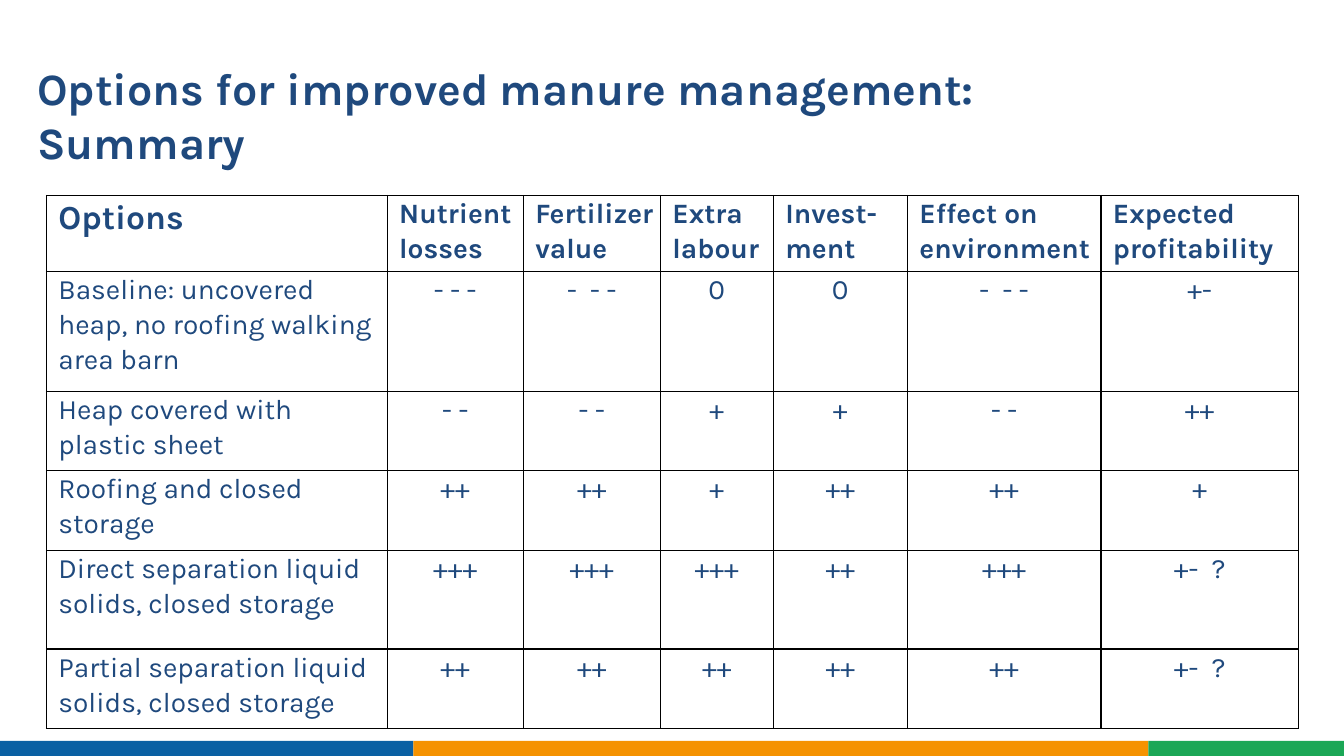
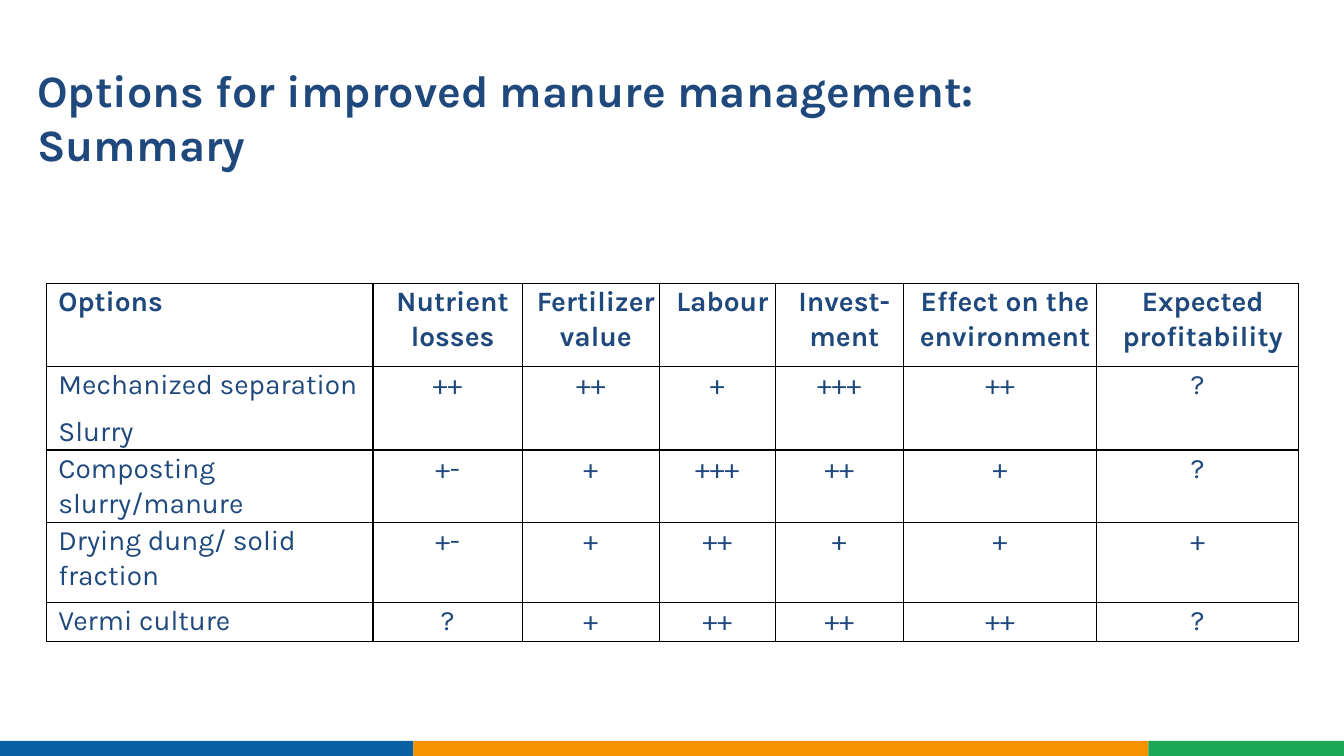
from dataclasses import dataclass

from lxml import etree
from pptx import Presentation
from pptx.dml.color import RGBColor
from pptx.enum.shapes import MSO_SHAPE
from pptx.enum.text import MSO_AUTO_SIZE, PP_ALIGN
from pptx.oxml.ns import qn
from pptx.slide import Slide
from pptx.table import _Cell
from pptx.util import Inches, Pt

RECTANGLE = MSO_SHAPE.RECTANGLE
GROW_TO_TEXT = MSO_AUTO_SIZE.SHAPE_TO_FIT_TEXT
LEFT, CENTER = PP_ALIGN.LEFT, PP_ALIGN.CENTER


@dataclass(frozen=True)
class Theme:
    font: str = "Karla"
    text: str = "1F497D"
    border: str = "000000"
    blue: str = "0A60A3"
    orange: str = "F59200"
    green: str = "1BA756"
    title_size: float = 32
    large_size: float = 24
    body_size: float = 20
    border_width: float = 1
    line_spacing: float = 1.07
    space_after: float = 8


@dataclass(frozen=True)
class Band:
    left: float
    right: float
    color: str


@dataclass(frozen=True)
class Summary:
    title_top: float
    title_width: float
    table_top: float
    columns: tuple[float, ...]
    row_heights: tuple[float, ...]
    rows: tuple[tuple[str, ...], ...]
    header_align: PP_ALIGN
    corner_size: float


THEME = Theme()
SLIDE_WIDTH, SLIDE_HEIGHT = 13.33, 7.5
TITLE = "Options for improved manure management: Summary"
TITLE_LEFT, TITLE_HEIGHT = 0.37, 0.54
TABLE_LEFT = 0.46
CELL_MARGIN, CELL_INDENT = 0.02, 0.1
BAND_HEIGHT = 0.15
BANDS = (
    Band(0, 4.1, THEME.blue),
    Band(4.1, 11.39, THEME.orange),
    Band(11.39, SLIDE_WIDTH, THEME.green),
)

SUMMARIES = (
    Summary(
        title_top=0.6,
        title_width=11.15,
        table_top=1.94,
        columns=(3.38, 1.35, 1.36, 1.12, 1.33, 1.92, 1.96),
        row_heights=(0.75, 1.19, 0.79, 0.79, 0.98, 0.79),
        rows=(
            ("Options", "Nutrient losses", "Fertilizer value", "Extra labour",
             "Invest-ment", "Effect on environment", "Expected profitability"),
            ("Baseline: uncovered heap, no roofing walking area barn",
             "- - -", "-  - -", "0", "0", "-  - -", "+-"),
            ("Heap covered with plastic sheet", "- -", "- -", "+", "+", "- -", "++"),
            ("Roofing and closed storage", "++", "++", "+", "++", "++", "+"),
            ("Direct separation liquid solids, closed storage",
             "+++", "+++", "+++", "++", "+++", "+-  ?"),
            ("Partial separation liquid solids, closed storage",
             "++", "++", "++", "++", "++", "+-  ?"),
        ),
        header_align=LEFT,
        corner_size=THEME.large_size,
    ),
    Summary(
        title_top=0.62,
        title_width=10.62,
        table_top=2.81,
        columns=(3.24, 1.48, 1.36, 1.15, 1.27, 1.92, 2),
        row_heights=(0.83, 0.81, 0.72, 0.79, 0.39),
        rows=(
            ("Options", "Nutrient losses", "Fertilizer value", "Labour",
             "Invest-ment", "Effect on the environment", "Expected profitability"),
            ("Mechanized separation\nSlurry", "++", "++", "+", "+++", "++", "?"),
            ("Composting slurry/manure", "+-", "+", "+++", "++", "+", "?"),
            ("Drying dung/ solid fraction", "+-", "+", "++", "+", "+", "+"),
            ("Vermi culture", "?", "+", "++", "++", "++", "?"),
        ),
        header_align=CENTER,
        corner_size=THEME.body_size,
    ),
)


def style_font(font, size: float, bold: bool) -> None:
    font.name = THEME.font
    font.size = Pt(size)
    font.bold = bold
    font.color.rgb = RGBColor.from_string(THEME.text)


def add_bands(page: Slide) -> None:
    for band in BANDS:
        shape = page.shapes.add_shape(
            RECTANGLE, Inches(band.left), Inches(SLIDE_HEIGHT - BAND_HEIGHT),
            Inches(band.right - band.left), Inches(BAND_HEIGHT))
        shape.shadow.inherit = False
        shape.fill.solid()
        shape.fill.fore_color.rgb = RGBColor.from_string(band.color)
        shape.line.fill.background()


def add_title(page: Slide, top: float, width: float) -> None:
    box = page.shapes.add_textbox(
        Inches(TITLE_LEFT), Inches(top), Inches(width), Inches(TITLE_HEIGHT))
    frame = box.text_frame
    frame.margin_left = frame.margin_right = frame.margin_top = frame.margin_bottom = 0
    frame.word_wrap = True
    frame.auto_size = GROW_TO_TEXT
    frame.text = TITLE
    style_font(frame.paragraphs[0].runs[0].font, THEME.title_size, bold=True)


def add_borders(cell: _Cell) -> None:
    properties = cell._tc.get_or_add_tcPr()
    for side in ("a:lnL", "a:lnR", "a:lnT", "a:lnB"):
        line = etree.SubElement(properties, qn(side), w=str(Pt(THEME.border_width)))
        fill = etree.SubElement(line, qn("a:solidFill"))
        etree.SubElement(fill, qn("a:srgbClr"), val=THEME.border)


def fill_cell(cell: _Cell, text: str, align: PP_ALIGN, size: float,
              bold: bool, indented: bool) -> None:
    add_borders(cell)
    cell.fill.background()
    cell.margin_left = cell.margin_right = Inches(CELL_MARGIN)
    cell.margin_top = cell.margin_bottom = 0
    cell.text_frame.text = text
    for para in cell.text_frame.paragraphs:
        if indented:
            para._p.get_or_add_pPr().set("marL", str(Inches(CELL_INDENT)))
        para.alignment = align
        para.line_spacing = THEME.line_spacing
        para.space_after = Pt(THEME.space_after)
        for span in para.runs:
            style_font(span.font, size, bold)


def add_options_table(page: Slide, summary: Summary) -> None:
    table = page.shapes.add_table(
        len(summary.rows), len(summary.columns),
        Inches(TABLE_LEFT), Inches(summary.table_top),
        Inches(sum(summary.columns)), Inches(sum(summary.row_heights))).table
    table.horz_banding = False
    for column, width in zip(table.columns, summary.columns):
        column.width = Inches(width)
    for row, height in zip(table.rows, summary.row_heights):
        row.height = Inches(height)
    for row_index, texts in enumerate(summary.rows):
        for column_index, text in enumerate(texts):
            header, option = row_index == 0, column_index == 0
            if option:
                align = LEFT
            else:
                align = summary.header_align if header else CENTER
            size = summary.corner_size if header and option else THEME.body_size
            fill_cell(table.cell(row_index, column_index), text, align, size,
                      bold=header, indented=header or option)


def main() -> None:
    deck = Presentation()
    deck.slide_width = Inches(SLIDE_WIDTH)
    deck.slide_height = Inches(SLIDE_HEIGHT)
    blank = deck.slide_layouts[6]
    for summary in SUMMARIES:
        page = deck.slides.add_slide(blank)
        add_bands(page)
        add_options_table(page, summary)
        add_title(page, summary.title_top, summary.title_width)
    deck.save("out.pptx")


if __name__ == "__main__":
    main()
